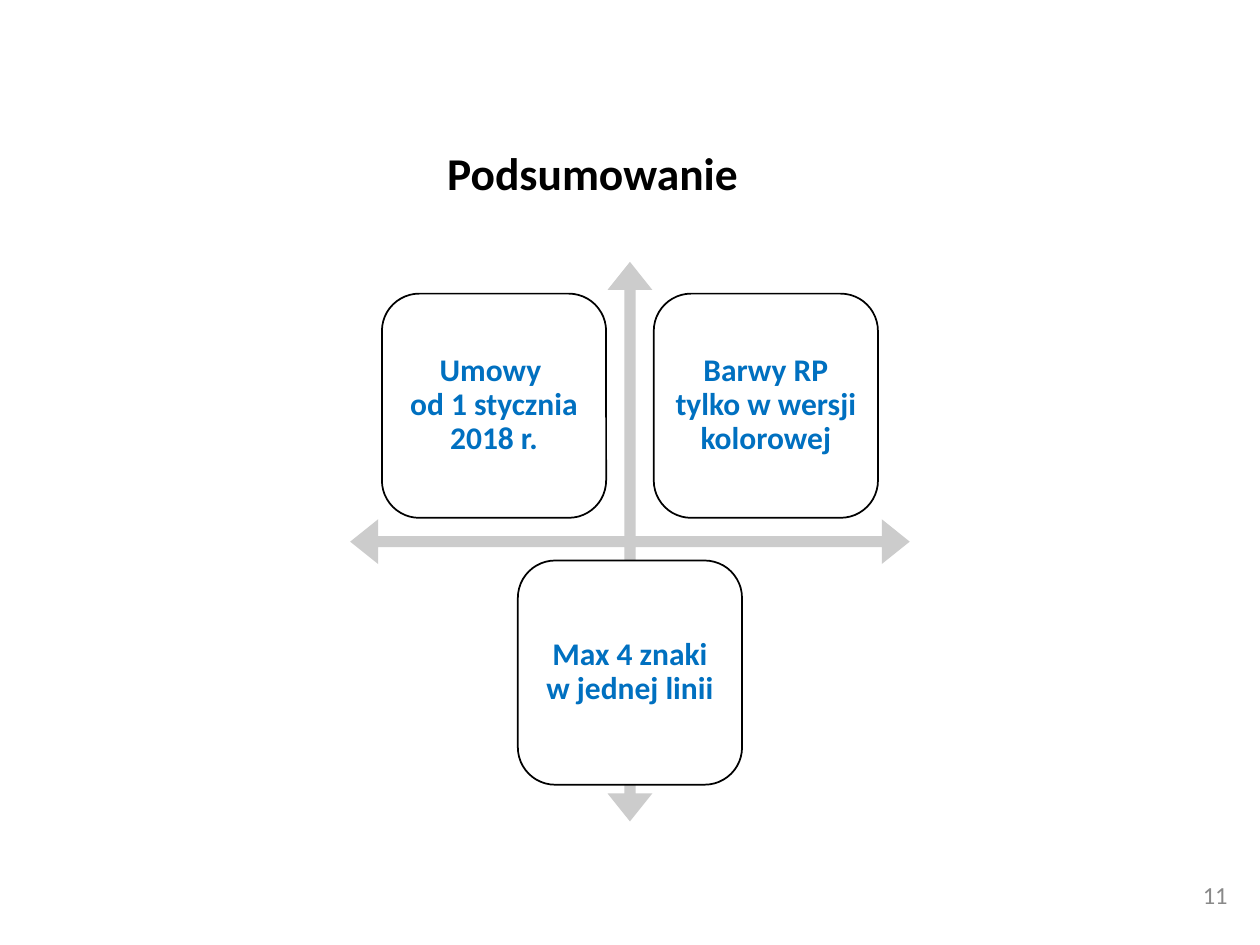
"""Build the summary slide: three rounded boxes around a four-way arrow."""
from pptx import Presentation
from pptx.dml.color import RGBColor
from pptx.enum import shapes, text
from pptx.util import Cm, Pt

TITLE = "Podsumowanie"
PAGE_NUMBER = "11"
CENTRE_X, CENTRE_Y = 12.7, 10.92
ARROW_SIZE, BOX_SIZE = 11.28, 4.52
BOXES = [
    ("Umowy \vod 1 stycznia 2018 r.", -2.74, -2.74),
    ("Barwy RP tylko w wersji kolorowej", 2.74, -2.74),
    ("Max 4 znaki w jednej linii", 0, 2.64),
]


def colour(code):
    return RGBColor.from_string(code)


def write(shape, words, size, code, align, anchor, bold=True, spacing=0.9):
    frame = shape.text_frame
    frame.text = words
    frame.word_wrap = True
    frame.auto_size = text.MSO_AUTO_SIZE.NONE
    frame.vertical_anchor = anchor
    para = frame.paragraphs[0]
    para.alignment = align
    para.line_spacing = spacing
    for span in para.runs:
        span.font.name = "Calibri"
        span.font.size = Pt(size)
        span.font.bold = bold
        span.font.color.rgb = colour(code)


def add_square(page, kind, x, y, size, fill, line=None):
    shape = page.shapes.add_shape(
        kind, Cm(x - size / 2), Cm(y - size / 2), Cm(size), Cm(size))
    shape.shadow.inherit = False
    shape.fill.solid()
    shape.fill.fore_color.rgb = colour(fill)
    if line:
        shape.line.color.rgb = colour(line)
        shape.line.width = Pt(1)
    else:
        shape.line.fill.background()
    return shape


def main():
    deck = Presentation()
    deck.slide_width, deck.slide_height = Cm(25.4), Cm(19.05)
    page = deck.slides.add_slide(deck.slide_layouts[5])

    title = page.shapes.title
    title.left, title.top, title.width, title.height = (
        Cm(8.76), Cm(2.92), Cm(16.94), Cm(1.8))
    write(title, TITLE, 26, "000000", text.PP_ALIGN.LEFT, text.MSO_ANCHOR.TOP)

    arrow = add_square(page, shapes.MSO_SHAPE.QUAD_ARROW,
                       CENTRE_X, CENTRE_Y, ARROW_SIZE, "CCCCCC")
    for index, value in enumerate((0.02, 0.04, 0.05)):
        arrow.adjustments[index] = value

    for words, shift_x, shift_y in BOXES:
        box = add_square(page, shapes.MSO_SHAPE.ROUNDED_RECTANGLE,
                         CENTRE_X + shift_x, CENTRE_Y + shift_y,
                         BOX_SIZE, "FFFFFF", "000000")
        frame = box.text_frame
        frame.margin_left = frame.margin_right = Cm(0.18)
        frame.margin_top = frame.margin_bottom = Cm(0.18)
        write(box, words, 18, "0070C0", text.PP_ALIGN.CENTER, text.MSO_ANCHOR.MIDDLE)

    number = page.shapes.add_textbox(Cm(19.28), Cm(17.53), Cm(5.72), Cm(1.02))
    write(number, PAGE_NUMBER, 14, "898989", text.PP_ALIGN.RIGHT,
          text.MSO_ANCHOR.MIDDLE, bold=False, spacing=1.0)

    deck.save("out.pptx")


if __name__ == "__main__":
    main()
